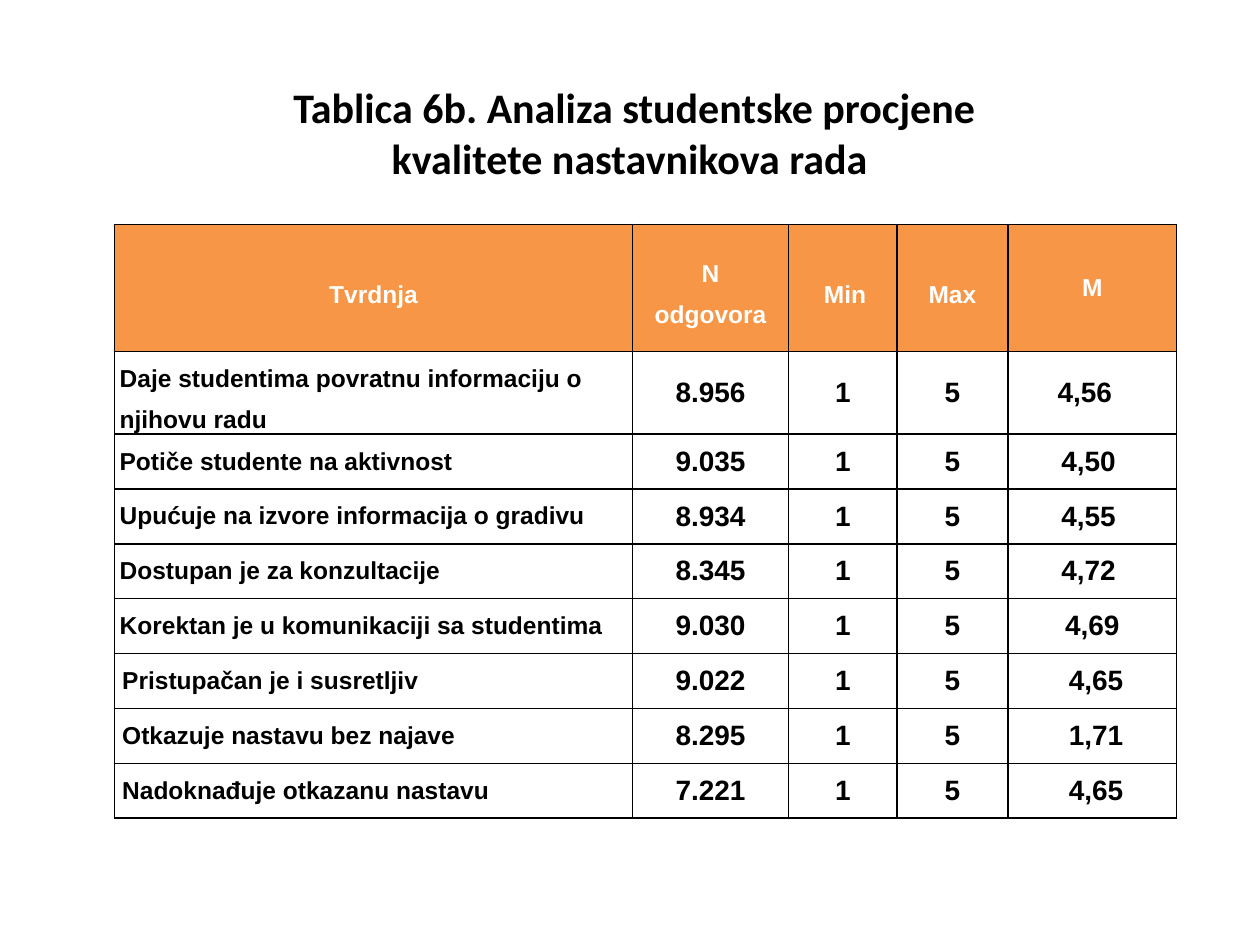
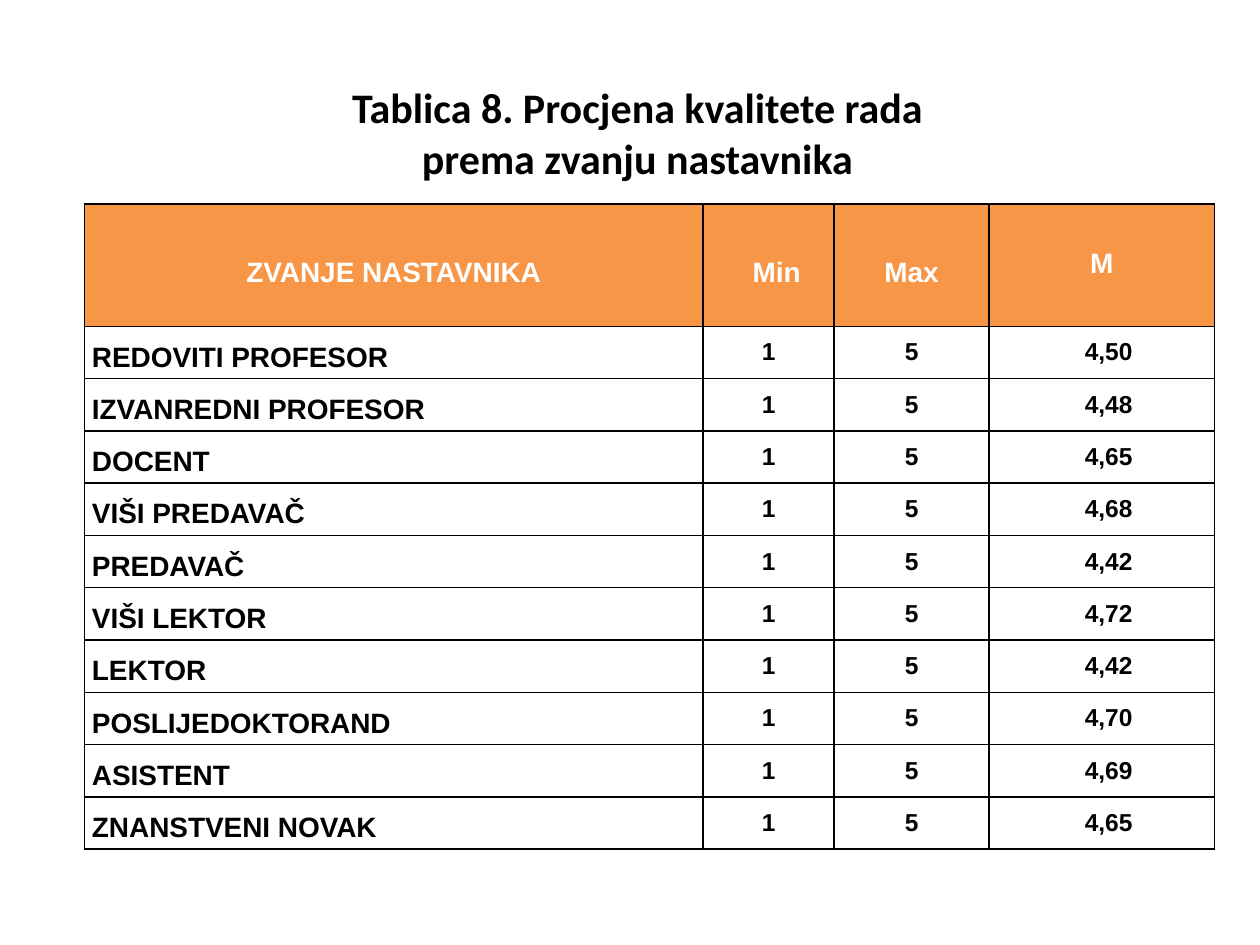
from dataclasses import dataclass

from lxml import etree
from pptx import Presentation
from pptx import util as u
from pptx.dml.color import RGBColor
from pptx.enum import text
from pptx.oxml import ns


@dataclass(frozen=True)
class Theme:
    ink: str = "000000"
    paper: str = "FFFFFF"
    header: str = "F79646"
    title_font: str = "Calibri"
    table_font: str = "Arial"
    title_size: int = 24
    border: int = 1
    title_left: float = 1.57
    title_top: float = 0.6
    title_height: float = 0.91
    inset: float = 0.04


THEME = Theme()
CENTER, LEFT = text.PP_ALIGN.CENTER, text.PP_ALIGN.LEFT
TOP, MIDDLE = text.MSO_ANCHOR.TOP, text.MSO_ANCHOR.MIDDLE

# Content: "steps" moves each mean to the right, one step per row
TABLES = [
    {
        "title": "Tablica 6b. Analiza studentske procjene\nkvalitete nastavnikova rada ",
        "title_width": 6.93,
        "at": (0.91, 1.78),
        "height": 4.71,
        "columns": (4.11, 1.24, 0.86, 0.88, 1.34),
        "header_height": 1.01,
        "tall_rows": {1: 0.65},
        "header": ("Tvrdnja", "N\nodgovora", "Min", "Max", "M"),
        "rows": [
            ("Daje studentima povratnu informaciju o njihovu radu", "8.956", "1", "5", "4,56"),
            ("Potiče studente na aktivnost", "9.035", "1", "5", "4,50"),
            ("Upućuje na izvore informacija o gradivu", "8.934", "1", "5", "4,55"),
            ("Dostupan je za konzultacije", "8.345", "1", "5", "4,72"),
            ("Korektan je u komunikaciji sa studentima", "9.030", "1", "5", "4,69"),
            ("Pristupačan je i susretljiv", "9.022", "1", "5", "4,65"),
            ("Otkazuje nastavu bez najave", "8.295", "1", "5", "1,71"),
            ("Nadoknađuje otkazanu nastavu", "7.221", "1", "5", "4,65"),
        ],
        "label_size": 14,
        "value_size": 16,
        "label_insets": [0.04] * 5 + [0.06] * 3,
        "min_header": (LEFT, 0.28),
        "mean_align": CENTER,
        "mean_insets": [0.06 * step for step in (0, 1, 1, 1, 2, 3, 3, 3)],
        "mean_right": 0.12,
    },
    {
        "title": "Tablica 8. Procjena kvalitete rada\nprema zvanju nastavnika",
        "title_width": 6.98,
        "at": (0.67, 1.62),
        "height": 5.12,
        "columns": (4.91, 1.04, 1.23, 1.79),
        "header_height": 0.97,
        "tall_rows": {},
        "header": ("ZVANJE NASTAVNIKA", "Min", "Max", "M"),
        "rows": [
            ("REDOVITI PROFESOR", "1", "5", "4,50"),
            ("IZVANREDNI PROFESOR", "1", "5", "4,48"),
            ("DOCENT", "1", "5", "4,65"),
            ("VIŠI PREDAVAČ", "1", "5", "4,68"),
            ("PREDAVAČ", "1", "5", "4,42"),
            ("VIŠI LEKTOR", "1", "5", "4,72"),
            ("LEKTOR", "1", "5", "4,42"),
            ("POSLIJEDOKTORAND", "1", "5", "4,70"),
            ("ASISTENT", "1", "5", "4,69"),
            ("ZNANSTVENI NOVAK", "1", "5", "4,65"),
        ],
        "label_size": 16,
        "value_size": 14,
        "label_insets": [0.06] * 10,
        "min_header": (CENTER, 0.17),
        "mean_align": LEFT,
        "mean_insets": [0.76] * 10,
        "mean_right": 0,
    },
]


def write(frame, content, font, size, color, align, spacing=None):
    frame.text = content
    for paragraph in frame.paragraphs:
        paragraph.alignment = align
        if spacing:
            paragraph.line_spacing = spacing
        for run in paragraph.runs:
            run.font.name, run.font.size, run.font.bold = font, u.Pt(size), True
            run.font.color.rgb = RGBColor.from_string(color)


def add_borders(cell):
    properties = cell._tc.get_or_add_tcPr()
    for side in ("lnL", "lnR", "lnT", "lnB"):
        line = etree.SubElement(properties, ns.qn(f"a:{side}"), w=str(u.Pt(THEME.border)))
        fill = etree.SubElement(line, ns.qn("a:solidFill"))
        etree.SubElement(fill, ns.qn("a:srgbClr"), val=THEME.ink)


def fill_cell(cell, content, size, align, left=0.0, right=0.0, anchor=MIDDLE,
              spacing=None, color=THEME.ink, background=THEME.paper):
    add_borders(cell)
    cell.fill.solid()
    cell.fill.fore_color.rgb = RGBColor.from_string(background)
    cell.margin_left, cell.margin_right = u.Inches(left), u.Inches(right)
    cell.margin_top = cell.margin_bottom = 0
    cell.vertical_anchor = anchor
    write(cell.text_frame, content, THEME.table_font, size, color, align, spacing)


def add_title(slide, content, width):
    title = slide.shapes.title
    title.left, title.top = u.Inches(THEME.title_left), u.Inches(THEME.title_top)
    title.width, title.height = u.Inches(width), u.Inches(THEME.title_height)
    frame = title.text_frame
    frame.word_wrap, frame.auto_size = True, text.MSO_AUTO_SIZE.NONE
    frame.vertical_anchor = TOP
    write(frame, content, THEME.title_font, THEME.title_size, THEME.ink, CENTER)


def add_survey_table(slide, data):
    rows, columns = len(data["rows"]) + 1, len(data["columns"])
    left, top = data["at"]
    table = slide.shapes.add_table(
        rows, columns, u.Inches(left), u.Inches(top),
        u.Inches(sum(data["columns"])), u.Inches(data["height"])).table
    table.first_row = table.horz_banding = False

    # Grid: fixed heights first, the rest shared equally
    fixed = {0: data["header_height"], **data["tall_rows"]}
    shared = (data["height"] - sum(fixed.values())) / (rows - len(fixed))
    for index, row in enumerate(table.rows):
        row.height = u.Inches(fixed.get(index, shared))
    for column, width in zip(table.columns, data["columns"]):
        column.width = u.Inches(width)

    # Header row
    for index, content in enumerate(data["header"]):
        align, inset = data["min_header"] if content == "Min" else (CENTER, THEME.inset)
        spacing = u.Pt(16) if content == "M" else 1.5
        fill_cell(table.cell(0, index), content, data["label_size"], align, inset,
                  THEME.inset, spacing=spacing, color=THEME.paper, background=THEME.header)

    # Body rows: label, counts, mean
    body = zip(data["rows"], data["label_insets"], data["mean_insets"])
    for index, ((label, *counts, mean), label_inset, mean_inset) in enumerate(body, 1):
        fill_cell(table.cell(index, 0), label, data["label_size"], LEFT,
                  label_inset, label_inset, TOP, 1.5)
        for column, count in enumerate(counts, 1):
            fill_cell(table.cell(index, column), count, data["value_size"], CENTER)
        fill_cell(table.cell(index, columns - 1), mean, data["value_size"],
                  data["mean_align"], mean_inset, data["mean_right"])


def main():
    presentation = Presentation()
    presentation.slide_width, presentation.slide_height = u.Inches(10), u.Inches(7.5)
    title_only = presentation.slide_layouts[5]
    for data in TABLES:
        slide = presentation.slides.add_slide(title_only)
        add_title(slide, data["title"], data["title_width"])
        add_survey_table(slide, data)
    presentation.save("out.pptx")


if __name__ == "__main__":
    main()
